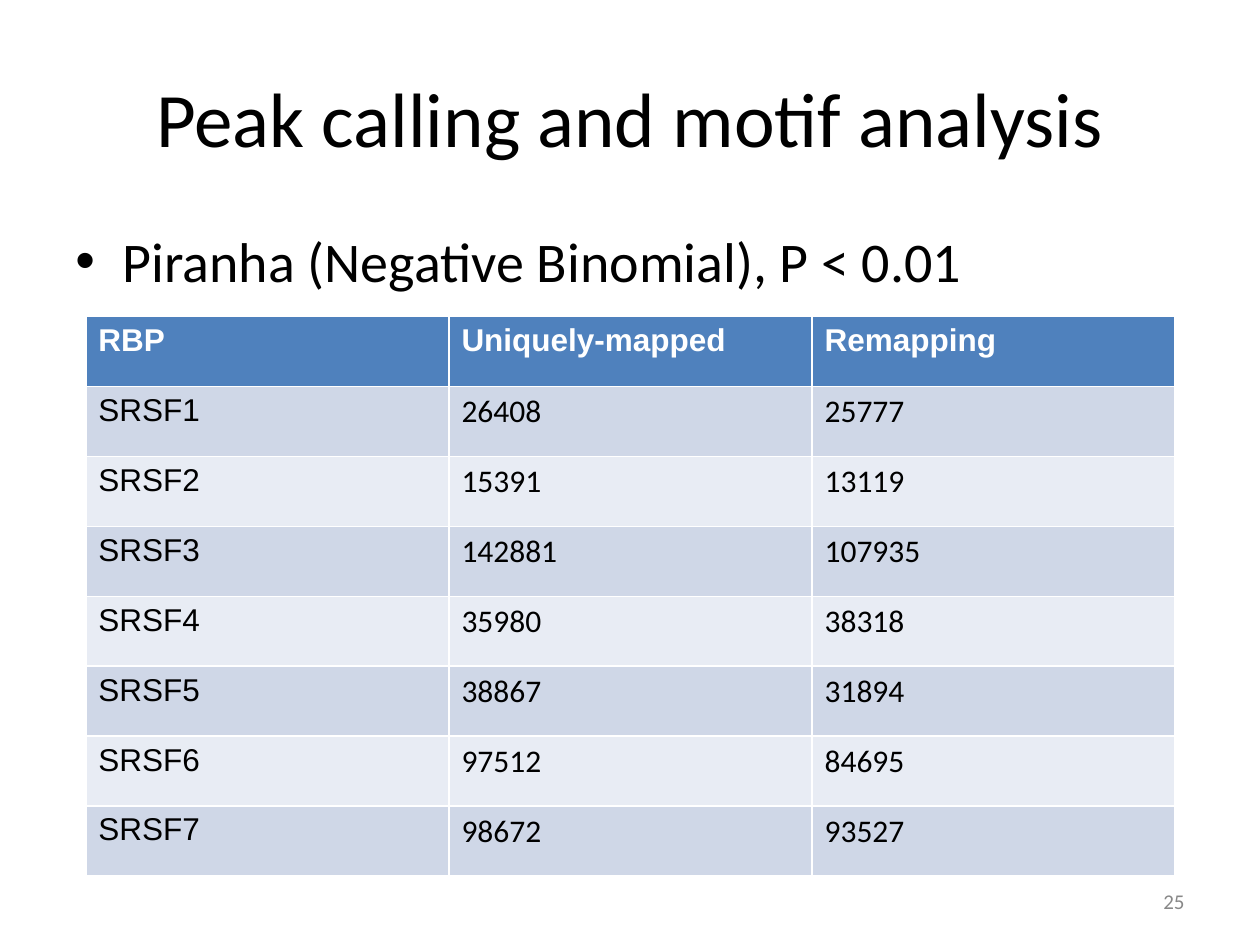
from dataclasses import dataclass

from lxml.etree import SubElement
from pptx import Presentation
from pptx.dml.color import RGBColor
from pptx.enum.text import MSO_ANCHOR, PP_ALIGN
from pptx.oxml.ns import qn
from pptx.slide import Slide
from pptx.util import Cm, Pt

BLACK, WHITE, GREY = "000000", "FFFFFF", "888888"
HEADER_FILL, BAND_FILLS = "4F81BD", ("CFD7E7", "E8ECF4")
COLUMN_WIDTH, ROW_HEIGHT = 7.32, 1.41
PEAK_COUNTS = (
    ("RBP", "Uniquely-mapped", "Remapping"),
    ("SRSF1", "26408", "25777"),
    ("SRSF2", "15391", "13119"),
    ("SRSF3", "142881", "107935"),
    ("SRSF4", "35980", "38318"),
    ("SRSF5", "38867", "31894"),
    ("SRSF6", "97512", "84695"),
    ("SRSF7", "98672", "93527"),
)


@dataclass(frozen=True)
class TextBlock:
    """Text with its place in centimetres and its style."""

    text: str
    left: float
    top: float
    width: float
    height: float
    size: int
    color: str = BLACK
    alignment: PP_ALIGN = PP_ALIGN.LEFT
    anchor: MSO_ANCHOR = MSO_ANCHOR.MIDDLE
    bulleted: bool = False


TEXT_BLOCKS = (
    TextBlock("Peak calling and motif analysis", 1.27, 0.76, 22.86, 3.18, 44,
              alignment=PP_ALIGN.CENTER),
    TextBlock("Piranha (Negative Binomial), P < 0.01", 1.27, 4.45, 22.86, 12.57, 32,
              anchor=MSO_ANCHOR.TOP, bulleted=True),
    TextBlock("25", 18.21, 17.65, 5.92, 1.02, 12, GREY, PP_ALIGN.RIGHT),
)


def rgb(value: str) -> RGBColor:
    """Turn a hex string into a colour."""
    return RGBColor.from_string(value)


def style_font(paragraph, name: str, size: int, color: str, bold: bool = False) -> None:
    """Set the font of a whole paragraph."""
    font = paragraph.font
    font.name, font.size, font.bold = name, Pt(size), bold
    font.color.rgb = rgb(color)


def add_bullet(paragraph) -> None:
    """Give a paragraph a hanging bullet."""
    properties = paragraph._p.get_or_add_pPr()
    indent = Cm(0.95)
    properties.set("marL", str(indent))
    properties.set("indent", str(-indent))
    SubElement(properties, qn("a:buFont")).set("typeface", "Arial")
    SubElement(properties, qn("a:buChar")).set("char", "•")


def add_text(slide: Slide, block: TextBlock) -> None:
    """Draw one block of text."""
    shape = slide.shapes.add_textbox(
        Cm(block.left), Cm(block.top), Cm(block.width), Cm(block.height))
    frame = shape.text_frame
    frame.word_wrap = True
    frame.vertical_anchor = block.anchor
    paragraph = frame.paragraphs[0]
    paragraph.text = block.text
    paragraph.alignment = block.alignment
    if block.bulleted:
        add_bullet(paragraph)
    style_font(paragraph, "Calibri", block.size, block.color)


def add_peak_table(slide: Slide, rows: tuple[tuple[str, ...], ...]) -> None:
    """Draw the table of peak counts with a header and banded rows."""
    column_count = len(rows[0])
    table = slide.shapes.add_table(
        len(rows), column_count, Cm(1.73), Cm(6.38),
        Cm(COLUMN_WIDTH * column_count), Cm(ROW_HEIGHT * len(rows))).table
    for row_index, row in enumerate(rows):
        is_header = row_index == 0
        fill = HEADER_FILL if is_header else BAND_FILLS[(row_index - 1) % 2]
        for column_index, text in enumerate(row):
            cell = table.cell(row_index, column_index)
            cell.fill.solid()
            cell.fill.fore_color.rgb = rgb(fill)
            paragraph = cell.text_frame.paragraphs[0]
            paragraph.text = text
            font_name = "Arial" if is_header or column_index == 0 else "Calibri"
            style_font(paragraph, font_name, 18, WHITE if is_header else BLACK, is_header)


def main() -> None:
    """Build the slide and save it."""
    presentation = Presentation()
    presentation.slide_width, presentation.slide_height = Cm(25.4), Cm(19.05)
    slide = presentation.slides.add_slide(presentation.slide_layouts[6])
    for block in TEXT_BLOCKS:
        add_text(slide, block)
    add_peak_table(slide, PEAK_COUNTS)
    presentation.save("out.pptx")


if __name__ == "__main__":
    main()
